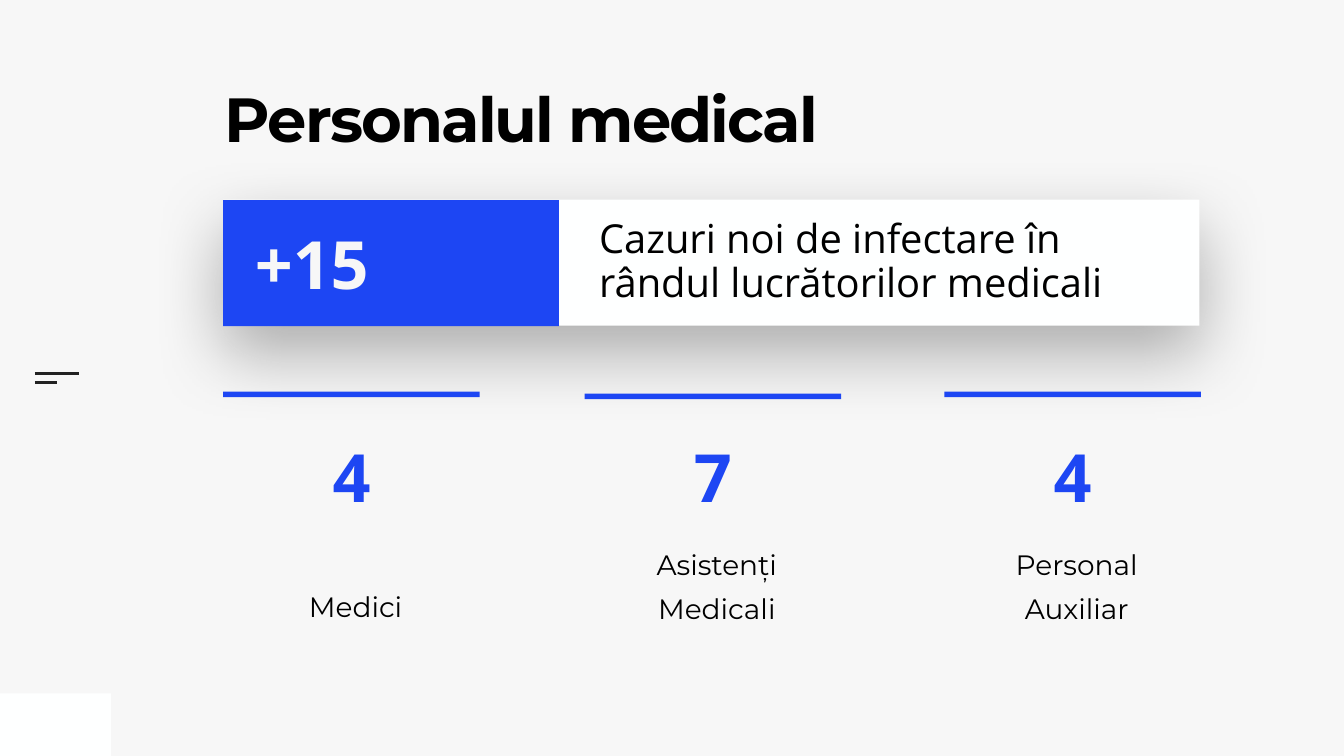
from dataclasses import dataclass

from lxml import etree
from pptx import Presentation
from pptx.dml.color import RGBColor
from pptx.enum import shapes, text
from pptx.oxml.ns import qn
from pptx.util import Inches, Pt

TITLE = "Personalul medical"
TOTAL = "+15"
SUMMARY = "Cazuri noi de infectare în rândul lucrătorilor medicali"
STAFF = [
    {"count": "4", "role": "Medici", "left": 4.43, "card_top": 7.77, "bar_top": 7.77},
    {"count": "7", "role": "Asistenți Medicali", "left": 11.6, "card_top": 7.81, "bar_top": 7.81},
    {"count": "4", "role": "Personal Auxiliar", "left": 18.74, "card_top": 7.81, "bar_top": 7.77},
]
MENU_LINES = [(7.41, 0.88), (7.59, 0.44)]


@dataclass(frozen=True)
class Theme:
    background: str = "F7F7F7"
    white: str = "FEFFFF"
    blue: str = "1D46F3"
    black: str = "000000"
    line: str = "222222"
    heading_font: str = "Montserrat"
    number_font: str = "Open Sans"
    title_size: int = 89
    number_size: int = 95
    summary_size: int = 57
    role_size: int = 40


THEME = Theme()
COLUMN_WIDTH = 5.09
CARD_HEIGHT = 5.46
BAR_HEIGHT = 0.11


def add_rectangle(slide, box, color):
    shape = slide.shapes.add_shape(shapes.MSO_SHAPE.RECTANGLE, *map(Inches, box))
    shape.shadow.inherit = False
    shape.fill.solid()
    shape.fill.fore_color.rgb = RGBColor.from_string(color)
    shape.line.fill.background()
    return shape


def write(shape, content, *, size, font, color=THEME.black, bold=False, align="LEFT",
          anchor="MIDDLE", insets=(0.1, 0.1, 0.1, 0.1), line_spacing=1.0,
          before=0, tracking=None):
    frame = shape.text_frame
    frame.word_wrap = True
    frame.vertical_anchor = text.MSO_ANCHOR[anchor]
    (frame.margin_left, frame.margin_top,
     frame.margin_right, frame.margin_bottom) = map(Inches, insets)
    paragraph = frame.paragraphs[0]
    paragraph.alignment = text.PP_ALIGN[align]
    paragraph.line_spacing = line_spacing
    paragraph.space_before = Pt(before)
    run = paragraph.add_run()
    run.text = content
    run.font.size = Pt(size)
    run.font.name = font
    run.font.bold = bold
    run.font.color.rgb = RGBColor.from_string(color)
    if tracking is not None:
        run.font._element.set("spc", str(round(tracking * 100)))


def add_text(slide, box, content, **style):
    write(slide.shapes.add_textbox(*map(Inches, box)), content, **style)


def add_shadow(shape, *, color, opacity, blur, distance, angle):
    effects = shape._element.spPr.find(qn("a:effectLst"))
    shadow = etree.SubElement(
        effects, qn("a:outerShdw"), blurRad=str(Pt(blur)), dist=str(Pt(distance)),
        dir=str(angle * 60000), rotWithShape="0")
    fill = etree.SubElement(shadow, qn("a:srgbClr"), val=color)
    etree.SubElement(fill, qn("a:alpha"), val=str(opacity * 1000))


def add_menu_mark(slide):
    left = 0.69
    for top, length in MENU_LINES:
        line = slide.shapes.add_connector(
            shapes.MSO_CONNECTOR.STRAIGHT,
            *map(Inches, (left, top, left + length, top)))
        line.line.color.rgb = RGBColor.from_string(THEME.line)
        line.line.width = Pt(3)
        etree.SubElement(line._element.spPr, qn("a:effectLst"))


def add_banner(slide):
    panel = add_rectangle(slide, (4.43, 3.96, 19.37, 2.5), THEME.white)
    add_shadow(panel, color=THEME.black, opacity=30, blur=100, distance=40, angle=90)
    add_text(slide, (11.79, 4.15, 11.76, 2.12), SUMMARY, size=THEME.summary_size,
             font=THEME.number_font, line_spacing=0.9)
    add_rectangle(slide, (4.43, 3.97, 6.66, 2.5), THEME.blue)
    add_text(slide, (4.96, 4.31, 6.03, 1.8), TOTAL, size=THEME.number_size,
             font=THEME.number_font, color=THEME.background, bold=True)


def add_staff_cards(slide):
    for group in STAFF:
        card = add_rectangle(
            slide, (group["left"], group["card_top"], COLUMN_WIDTH, CARD_HEIGHT),
            THEME.background)
        write(card, group["role"], size=THEME.role_size, font=THEME.heading_font,
              align="CENTER", anchor="BOTTOM", insets=(0.55, 0.71, 0.39, 0.87),
              line_spacing=1.3, before=20)


def add_staff_counts(slide):
    for group in STAFF:
        add_rectangle(slide, (group["left"], group["bar_top"], COLUMN_WIDTH, BAR_HEIGHT),
                      THEME.blue)
        add_text(slide, (group["left"], 8.54, COLUMN_WIDTH, 1.8), group["count"],
                 size=THEME.number_size, font=THEME.number_font, color=THEME.blue,
                 bold=True, align="CENTER")


def main():
    presentation = Presentation()
    presentation.slide_width = Inches(26.67)
    presentation.slide_height = Inches(15)
    slide = presentation.slides.add_slide(presentation.slide_layouts[6])
    slide.background.fill.solid()
    slide.background.fill.fore_color.rgb = RGBColor.from_string(THEME.background)
    add_rectangle(slide, (0, 13.76, 2.2, 1.24), THEME.white)
    add_menu_mark(slide)
    add_staff_cards(slide)
    add_text(slide, (4.46, 1.87, 13.01, 2.73), TITLE, size=THEME.title_size,
             font=THEME.heading_font, bold=True, anchor="TOP", insets=(0, 0, 0, 0),
             line_spacing=0.8, tracking=-2.7)
    add_banner(slide)
    add_staff_counts(slide)
    presentation.save("out.pptx")


if __name__ == "__main__":
    main()
